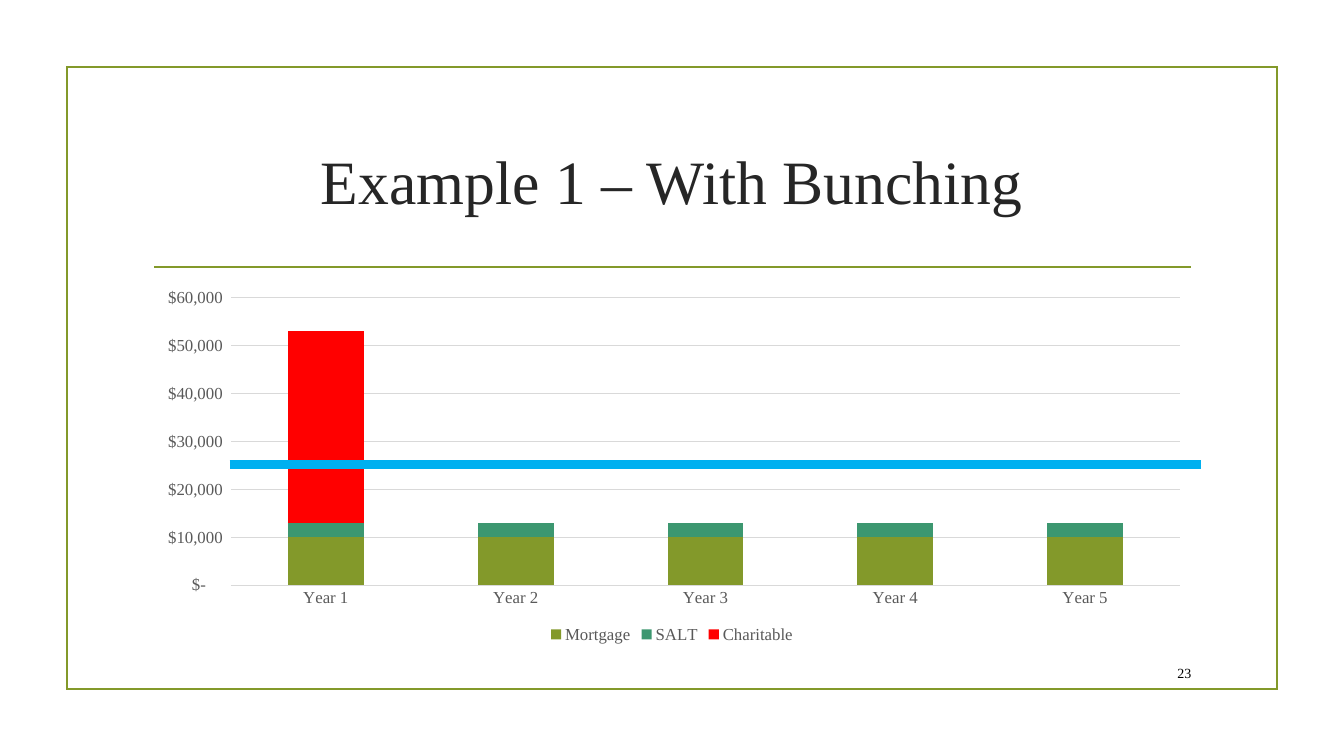
"""Build the "Example 1 – With Bunching" slide with its stacked column chart."""
import pptx
import pptx.chart.data
import pptx.dml.color
import pptx.enum.chart
import pptx.enum.shapes
import pptx.enum.text
import pptx.oxml
import pptx.util

FONT = "Times New Roman"
OLIVE, GREEN, RED, BLUE = "83992A", "3C9770", "FF0000", "00B0F0"
GRID_GRAY, LABEL_GRAY, TITLE_GRAY = "D9D9D9", "595959", "262626"
BLACK, WHITE = "000000", "FFFFFF"
DOLLARS = r'_("$"* #,##0_);_("$"* \(#,##0\);_("$"* "-"??_);_(@_)'
NAMESPACE = 'xmlns:a="http://schemas.openxmlformats.org/drawingml/2006/main"'


def color(hex_string):
    """Turn a hex string into a colour."""
    return pptx.dml.color.RGBColor.from_string(hex_string)


def style_font(font, size, hex_string):
    """Set the face, size and colour of a font."""
    font.name = FONT
    font.size = pptx.util.Pt(size)
    font.color.rgb = color(hex_string)


presentation = pptx.Presentation()
presentation.slide_width = pptx.util.Inches(13.33)
presentation.slide_height = pptx.util.Inches(7.5)
slide = presentation.slides.add_slide(presentation.slide_layouts[6])
column = presentation.slide_width / 80
row = presentation.slide_height / 45
content_left, content_width = 8.5, 63
content_right = content_left + content_width

frame = slide.shapes.add_shape(
    pptx.enum.shapes.MSO_SHAPE.RECTANGLE,
    int(4 * column), int(4 * row), int(72 * column), int(37 * row))
frame.shadow.inherit = False
frame.fill.solid()
frame.fill.fore_color.rgb = color(WHITE)
frame.line.color.rgb = color(OLIVE)
frame.line.width = pptx.util.Pt(1.25)
frame.line._get_or_add_ln().append(
    pptx.oxml.parse_xml(f'<a:miter {NAMESPACE} lim="800000"/>'))

alignments = pptx.enum.text.PP_ALIGN
texts = [
    ("Example 1 – With Bunching", content_left, 6.4, content_width, 8.6,
     alignments.CENTER, 44, TITLE_GRAY),
    ("23", content_right - 3.55, 39.15, 3.55, 1.85, alignments.RIGHT, 10, BLACK),
]
for text, left, top, width, height, alignment, size, text_color in texts:
    box = slide.shapes.add_textbox(
        int(left * column), int(top * row), int(width * column), int(height * row))
    box.text_frame.word_wrap = True
    box.text_frame.vertical_anchor = pptx.enum.text.MSO_ANCHOR.MIDDLE
    paragraph = box.text_frame.paragraphs[0]
    paragraph.text = text
    paragraph.alignment = alignment
    style_font(paragraph.font, size, text_color)

chart_data = pptx.chart.data.CategoryChartData(number_format=DOLLARS)
chart_data.categories = [f"Year {year}" for year in range(1, 6)]
chart_data.add_series("Mortgage", [10000] * 5)
chart_data.add_series("SALT", [3000] * 5)
chart_data.add_series("Charitable", [40000] + [0] * 4)
chart = slide.shapes.add_chart(
    pptx.enum.chart.XL_CHART_TYPE.COLUMN_STACKED,
    int(content_left * column), int(16.77 * row),
    int(content_width * column), int(21.77 * row), chart_data).chart
style_font(chart.font, 12, LABEL_GRAY)
chart.has_title = False
chart.has_legend = True
chart.legend.position = pptx.enum.chart.XL_LEGEND_POSITION.BOTTOM
chart.legend.include_in_layout = False
style_font(chart.legend.font, 12, LABEL_GRAY)

plot = chart.plots[0]
plot.gap_width = 150
plot.overlap = 100
plot.vary_by_categories = False
for series, series_color in zip(plot.series, (OLIVE, GREEN, RED)):
    series.format.fill.solid()
    series.format.fill.fore_color.rgb = color(series_color)

for axis in (chart.category_axis, chart.value_axis):
    axis.major_tick_mark = pptx.enum.chart.XL_TICK_MARK.NONE
    axis.minor_tick_mark = pptx.enum.chart.XL_TICK_MARK.NONE
    style_font(axis.tick_labels.font, 12, LABEL_GRAY)
value_axis = chart.value_axis
value_axis.minimum_scale, value_axis.maximum_scale = 0, 60000
value_axis.major_unit = 10000
value_axis.tick_labels.number_format = DOLLARS
value_axis.tick_labels.number_format_is_linked = False
value_axis.format.line.fill.background()
value_axis.has_major_gridlines = True
for line in (chart.category_axis.format.line, value_axis.major_gridlines.format.line):
    line.color.rgb = color(GRID_GRAY)
    line.width = pptx.util.Pt(0.75)

rules = [
    (9.18, 70.88, 15.9, OLIVE, 1.25),
    (13.67, content_right, 27.65, BLUE, 6.25),
]
for start, end, height, line_color, weight in rules:
    connector = slide.shapes.add_connector(
        pptx.enum.shapes.MSO_CONNECTOR.STRAIGHT,
        int(start * column), int(height * row), int(end * column), int(height * row))
    connector.line.color.rgb = color(line_color)
    connector.line.width = pptx.util.Pt(weight)
    connector._element.spPr.append(
        pptx.oxml.parse_xml(f'<a:effectLst {NAMESPACE}/>'))

presentation.save("out.pptx")
